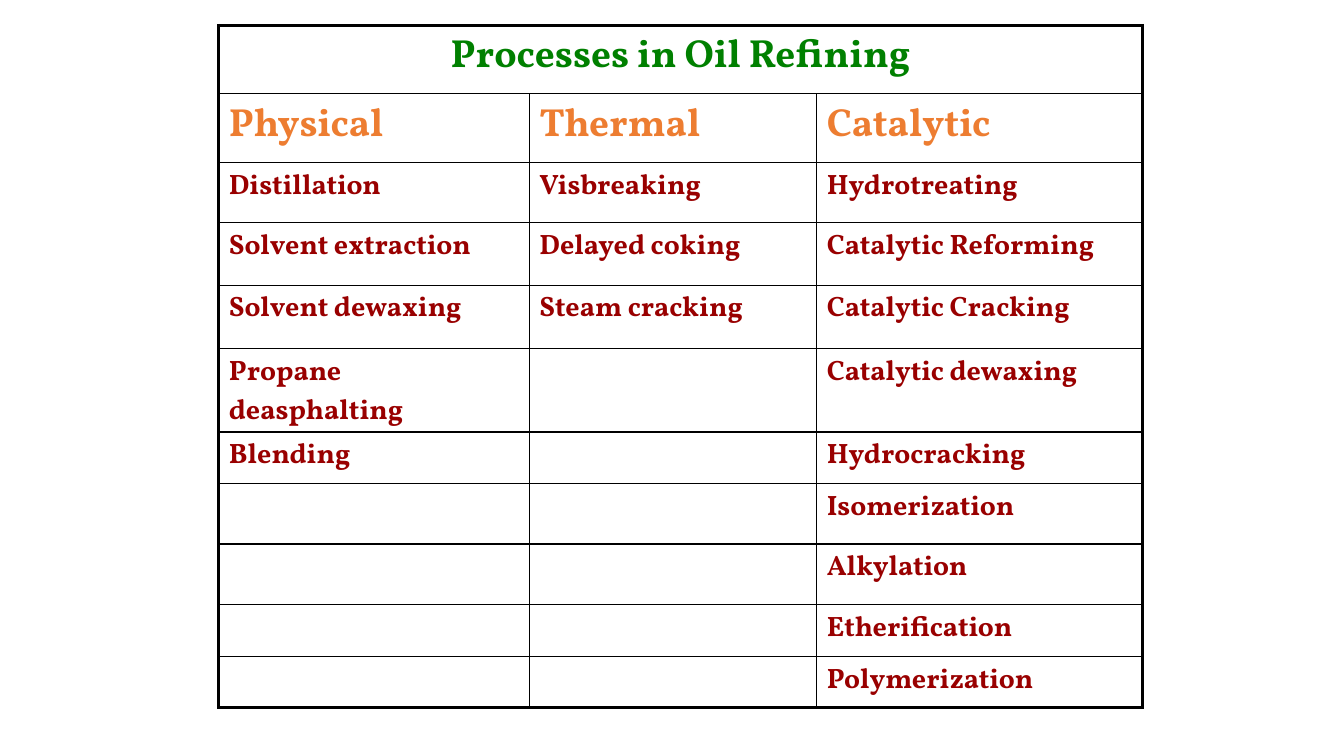
from dataclasses import dataclass

from lxml.etree import SubElement
from pptx import Presentation
from pptx.dml.color import RGBColor
from pptx.enum.text import PP_ALIGN
from pptx.oxml import parse_xml
from pptx.oxml.ns import nsdecls, qn
from pptx.table import Table, _Cell
from pptx.util import Inches, Pt

COLORS = {"title": "008000", "heading": "ED7D31", "process": "990000", "border": "000000"}
OUTER, INNER = 2.25, 1
COLUMN_WIDTHS = [3.08, 2.85, 3.23]
ROW_HEIGHTS = [0.68, 0.68, 0.6, 0.62, 0.63, 0.57, 0.51, 0.6, 0.6, 0.52, 0.5]


@dataclass
class ProcessGroup:
    """A family of refining processes, shown as one column."""
    heading: str
    processes: list[str]


@dataclass
class Style:
    """Look of the wording in a cell."""
    size: float
    color: str
    align: PP_ALIGN = PP_ALIGN.LEFT


TITLE = Style(28, "title", PP_ALIGN.CENTER)
HEADING = Style(28, "heading")
PROCESS = Style(20, "process")
GROUPS = [
    ProcessGroup("Physical", ["Distillation", "Solvent extraction", "Solvent dewaxing",
                              "Propane deasphalting", "Blending"]),
    ProcessGroup("Thermal", ["Visbreaking", "Delayed coking", "Steam cracking"]),
    ProcessGroup("Catalytic", ["Hydrotreating", "Catalytic Reforming", "Catalytic Cracking",
                               "Catalytic dewaxing", "Hydrocracking", "Isomerization",
                               "Alkylation", "Etherification", "Polymerization"]),
]


def write(cell: _Cell, wording: str, style: Style) -> None:
    """Put formatted wording into a cell."""
    cell.margin_bottom = Inches(0)
    paragraph = cell.text_frame.paragraphs[0]
    paragraph.alignment = style.align
    before = SubElement(paragraph._p.get_or_add_pPr(), qn("a:spcBef"))
    SubElement(before, qn("a:spcPct"), val="20000")
    run = paragraph.add_run()
    run.text = wording
    font_values = {"name": "Vollkorn", "size": Pt(style.size), "bold": True}
    for attribute, value in font_values.items():
        setattr(run.font, attribute, value)
    run.font.color.rgb = RGBColor.from_string(COLORS[style.color])


def draw_borders(cell: _Cell, row: int, column: int) -> None:
    """Rule the cell, heavier along the outside of the table."""
    heavy = {
        "L": column == 0,
        "R": column == len(COLUMN_WIDTHS) - 1,
        "T": row == 0,
        "B": row == len(ROW_HEIGHTS) - 1,
    }
    cell.fill.background()
    properties = cell._tc.get_or_add_tcPr()
    for position, (side, is_outer) in enumerate(heavy.items()):
        width = Pt(OUTER if is_outer else INNER)
        properties.insert(position, parse_xml(
            f'<a:ln{side} {nsdecls("a")} w="{width}"><a:solidFill>'
            f'<a:srgbClr val="{COLORS["border"]}"/></a:solidFill></a:ln{side}>'))


def fill_table(table: Table) -> None:
    """Size the grid and fill in the title and process groups."""
    for attribute, value in {"first_row": False, "horz_banding": False}.items():
        setattr(table, attribute, value)
    for column, width in zip(table.columns, COLUMN_WIDTHS):
        column.width = Inches(width)
    for row, height in zip(table.rows, ROW_HEIGHTS):
        row.height = Inches(height)
    for row in range(len(ROW_HEIGHTS)):
        for column in range(len(COLUMN_WIDTHS)):
            draw_borders(table.cell(row, column), row, column)

    title = table.cell(0, 0)
    title.merge(table.cell(0, len(GROUPS) - 1))
    title_edge = title._tc.get_or_add_tcPr().find(qn("a:lnR"))
    title_edge.set("w", str(Pt(OUTER)))
    write(title, "Processes in Oil Refining", TITLE)
    for column, group in enumerate(GROUPS):
        write(table.cell(1, column), group.heading, HEADING)
        for row, process in enumerate(group.processes, start=2):
            write(table.cell(row, column), process, PROCESS)


def main() -> None:
    """Build the slide and save it."""
    presentation = Presentation()
    presentation.slide_width = Inches(13.33)
    presentation.slide_height = Inches(7.5)
    slide = presentation.slides.add_slide(presentation.slide_layouts[6])
    frame = slide.shapes.add_table(
        len(ROW_HEIGHTS), len(COLUMN_WIDTHS),
        Inches(2.17), Inches(0.25), Inches(9.17), Inches(6.5))
    fill_table(frame.table)
    presentation.save("out.pptx")


if __name__ == "__main__":
    main()
